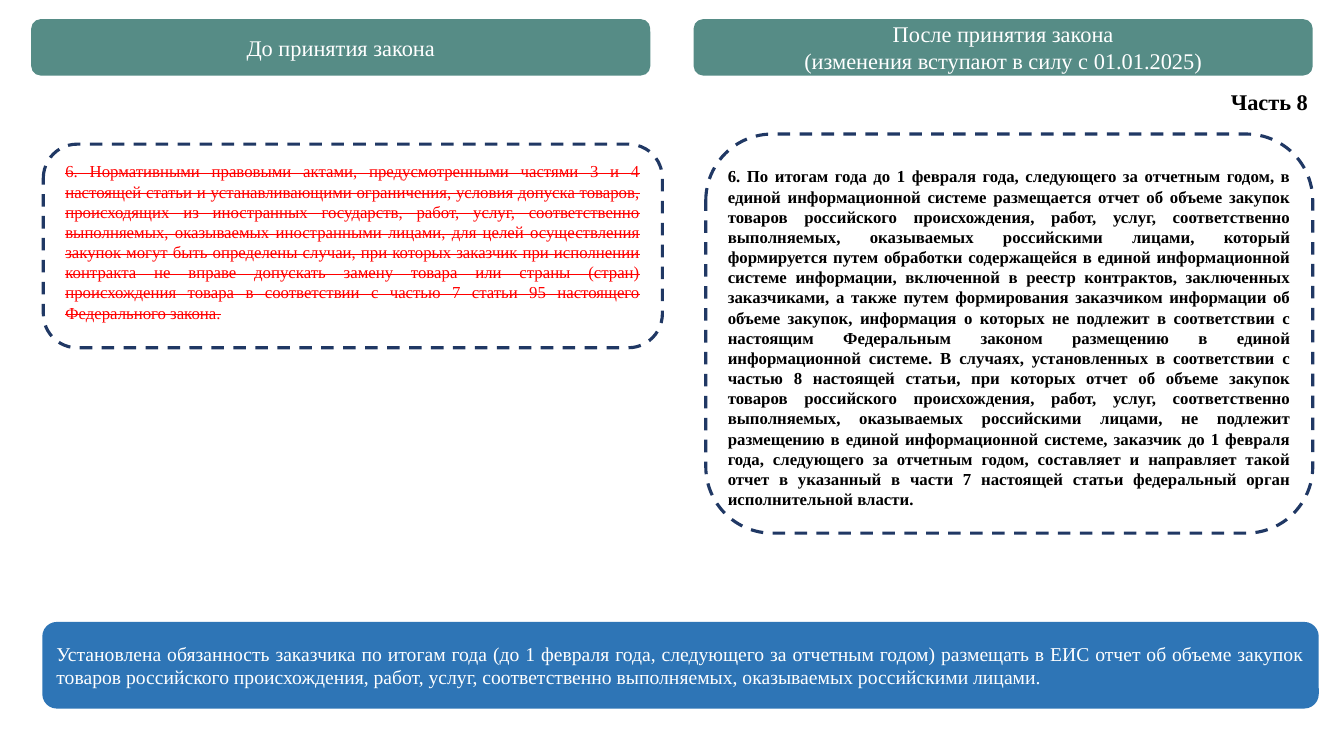
from pptx import Presentation
from pptx.dml.color import RGBColor
from pptx.enum import dml, shapes, text
from pptx.util import Inches, Pt

TEAL = RGBColor(0x56, 0x8C, 0x86)
BLUE = RGBColor(0x2E, 0x75, 0xB6)
NAVY = RGBColor(0x20, 0x38, 0x64)
RED = RGBColor(0xFF, 0x00, 0x00)
BLACK = RGBColor(0x00, 0x00, 0x00)
WHITE = RGBColor(0xFF, 0xFF, 0xFF)

CENTER, JUSTIFY = text.PP_ALIGN.CENTER, text.PP_ALIGN.JUSTIFY

OLD_RULE = (
    "6. Нормативными правовыми актами, предусмотренными частями 3 и 4 настоящей статьи "
    "и устанавливающими ограничения, условия допуска товаров, происходящих из иностранных "
    "государств, работ, услуг, соответственно выполняемых, оказываемых иностранными лицами, "
    "для целей осуществления закупок могут быть определены случаи, при которых заказчик при "
    "исполнении контракта не вправе допускать замену товара или страны (стран) происхождения "
    "товара в соответствии с частью 7 статьи 95 настоящего Федерального закона."
)
REPORT_DUTY = (
    "6. По итогам года до 1 февраля года, следующего за отчетным годом, в единой "
    "информационной системе размещается отчет об объеме закупок товаров российского "
    "происхождения, работ, услуг, соответственно выполняемых, оказываемых российскими "
    "лицами, который формируется путем обработки содержащейся в единой информационной "
    "системе информации, включенной в реестр контрактов, заключенных заказчиками, а также "
    "путем формирования заказчиком информации об объеме закупок, информация о которых не "
    "подлежит в соответствии с настоящим Федеральным законом размещению в единой "
    "информационной системе."
)
UNPUBLISHED_CASE = (
    "В случаях, установленных в соответствии с частью 8 настоящей "
    "статьи, при которых отчет об объеме закупок товаров российского происхождения, работ, "
    "услуг, соответственно выполняемых, оказываемых российскими лицами, не подлежит "
    "размещению в единой информационной системе, заказчик до 1 февраля года, следующего за "
    "отчетным годом, составляет и направляет такой отчет в указанный в части 7 настоящей "
    "статьи федеральный орган исполнительной власти."
)
NEW_RULE = " ".join((REPORT_DUTY, UNPUBLISHED_CASE))
SUMMARY = (
    "Установлена обязанность заказчика по итогам года (до 1 февраля года, следующего за "
    "отчетным годом) размещать в ЕИС отчет об объеме закупок товаров российского "
    "происхождения, работ, услуг, соответственно выполняемых, оказываемых российскими лицами."
)


def write(frame, lines, align, size, color, bold=False, strike=False):
    """Put each line in its own paragraph, all in one format."""
    font_format = {"name": "Times New Roman", "size": Pt(size), "bold": bold}
    for index, line in enumerate(lines):
        paragraph = frame.add_paragraph() if index else frame.paragraphs[0]
        paragraph.alignment = align
        run = paragraph.add_run()
        run.text = line
        for name, value in font_format.items():
            setattr(run.font, name, value)
        run.font.color.rgb = color
        if strike:
            run._r.get_or_add_rPr().set("strike", "sngStrike")


def add_rounded(slide, box):
    rounded = slide.shapes.add_shape(
        shapes.MSO_SHAPE.ROUNDED_RECTANGLE, *map(Inches, box))
    rounded.shadow.inherit = False
    return rounded


def add_banner(slide, box, fill, lines, align, size):
    banner = add_rounded(slide, box)
    banner.fill.solid()
    banner.fill.fore_color.rgb = fill
    banner.line.fill.background()
    banner.text_frame.vertical_anchor = text.MSO_ANCHOR.MIDDLE
    write(banner.text_frame, lines, align, size, WHITE)


def add_dashed_frame(slide, box):
    frame = add_rounded(slide, box)
    frame.fill.background()
    frame.line.color.rgb = NAVY
    frame.line.width = Pt(2.25)
    frame.line.dash_style = dml.MSO_LINE.DASH


def add_text(slide, box, wording, align, size, color, wrap=True, **style):
    frame = slide.shapes.add_textbox(*map(Inches, box)).text_frame
    frame.word_wrap = wrap
    write(frame, [wording], align, size, color, **style)


def main():
    deck = Presentation()
    deck.slide_width, deck.slide_height = Inches(13.33), Inches(7.5)
    slide = deck.slides.add_slide(deck.slide_layouts[6])

    headings = (
        (0.31, ["До принятия закона"]),
        (6.88, ["После принятия закона", "(изменения вступают в силу с 01.01.2025)"]),
    )
    for left, lines in headings:
        add_banner(slide, (left, 0.19, 6.14, 0.56), TEAL, lines, CENTER, 16)

    for box in ((0.43, 1.43, 6.14, 2.02), (7, 1.33, 6.02, 3.96)):
        add_dashed_frame(slide, box)

    add_text(slide, (0.55, 1.55, 5.9, 1.8), OLD_RULE, JUSTIFY, 12, RED, strike=True)
    add_text(slide, (12.11, 0.83, 0.98, 0.37), "Часть 8", text.PP_ALIGN.LEFT, 16, BLACK,
             wrap=False, bold=True)
    add_text(slide, (7.12, 1.6, 5.78, 3.53), NEW_RULE, JUSTIFY, 12, BLACK, bold=True)

    add_banner(slide, (0.42, 6.17, 12.66, 0.86), BLUE, [SUMMARY], JUSTIFY, 14)
    deck.save("out.pptx")


if __name__ == "__main__":
    main()
